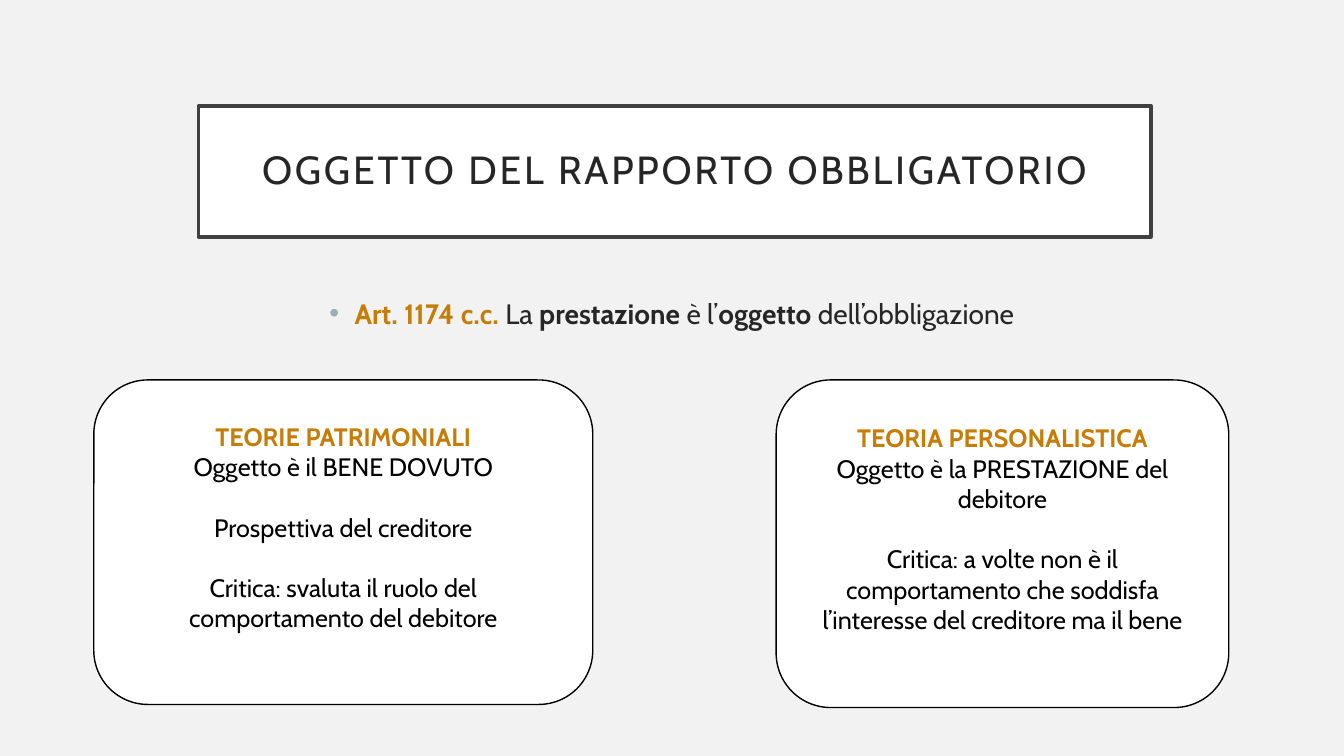
from lxml import etree
from pptx import Presentation
from pptx.dml.color import RGBColor
from pptx.enum import shapes, text
from pptx.oxml import ns
from pptx.util import Pt

FONT = "Cabin"
GOLD, BLACK, DARK, WHITE = "C67D08", "000000", "262626", "FFFFFF"
LINE = 21.7  # height of one line of card text


def color(fill, code):
    fill.solid()
    fill.fore_color.rgb = RGBColor.from_string(code)


def add_run(para, words, size, code, bold=False):
    run = para.add_run()
    run.text = words
    run.font.name, run.font.size, run.font.bold = FONT, Pt(size), bold
    color(run.font.fill, code)
    return run


def add_box(slide, kind, box, edge, width):
    shape = slide.shapes.add_shape(kind, *map(Pt, box))
    shape.shadow.inherit = False
    color(shape.fill, WHITE)
    color(shape.line.fill, edge)
    shape.line.width = Pt(width)
    frame = shape.text_frame
    frame.word_wrap = True
    frame.vertical_anchor = text.MSO_ANCHOR.MIDDLE
    return frame


# Framed heading
def add_title(slide, box, words):
    frame = add_box(slide, shapes.MSO_SHAPE.RECTANGLE, box, "404040", 2.5)
    frame.margin_left = frame.margin_right = Pt(14.4)
    frame.margin_top = frame.margin_bottom = Pt(14.4)
    para = frame.paragraphs[0]
    para.alignment = text.PP_ALIGN.CENTER
    para.line_spacing = 0.9
    run = add_run(para, words, 28, DARK)
    run.font._element.set("spc", "200")


# Centred bullet with mixed runs
def add_rule(slide, box, runs):
    frame = slide.shapes.add_textbox(*map(Pt, box)).text_frame
    frame.word_wrap = True
    para = frame.paragraphs[0]
    para.alignment = text.PP_ALIGN.CENTER
    props = para._p.get_or_add_pPr()
    props.set("marL", str(Pt(18)))
    props.set("indent", str(-Pt(18)))
    tint = etree.SubElement(props, ns.qn("a:buClr"))
    etree.SubElement(tint, ns.qn("a:srgbClr"), val="9BAFB5")
    etree.SubElement(props, ns.qn("a:buFont"), typeface="Arial")
    etree.SubElement(props, ns.qn("a:buChar"), char="•")
    for words, code, bold in runs:
        add_run(para, words, 20, code, bold)


# Rounded card: gold heading, then lines with the gap above each
def add_card(slide, box, head, lines):
    frame = add_box(slide, shapes.MSO_SHAPE.ROUNDED_RECTANGLE, box, BLACK, 1)
    frame.margin_bottom = Pt(3.6 + LINE)
    para = frame.paragraphs[0]
    para.alignment = text.PP_ALIGN.CENTER
    add_run(para, head, 18, GOLD, True)
    for words, gap in lines:
        para = frame.add_paragraph()
        para.alignment = text.PP_ALIGN.CENTER
        para.space_before = Pt(gap)
        add_run(para, words, 18, BLACK)


def main():
    deck = Presentation()
    deck.slide_width, deck.slide_height = Pt(960), Pt(540)
    slide = deck.slides.add_slide(deck.slide_layouts[6])
    color(slide.background.fill, "F2F2F2")

    add_title(slide, (141.8, 75.6, 680.4, 93.6),
              "OGGETTO DEL RAPPORTO OBBLIGATORIO")
    add_rule(slide, (175.7, 208, 608.4, 64), [
        ("Art. 1174 c.c. ", GOLD, True),
        ("La ", DARK, False),
        ("prestazione", DARK, True),
        (" è l’", DARK, False),
        ("oggetto", DARK, True),
        (" dell’obbligazione", DARK, False),
    ])
    add_card(slide, (67, 271.4, 356.4, 231.8), "TEORIE PATRIMONIALI", [
        ("Oggetto è il BENE DOVUTO", 0),
        ("Prospettiva del creditore", LINE),
        ("Critica: svaluta il ruolo del comportamento del debitore", LINE),
    ])
    add_card(slide, (554.4, 271.4, 323.3, 234), "TEORIA PERSONALISTICA", [
        ("Oggetto è la PRESTAZIONE del debitore", 0),
        ("Critica: a volte non è il comportamento che soddisfa "
         "l’interesse del creditore ma il bene", LINE),
    ])
    deck.save("out.pptx")


if __name__ == "__main__":
    main()
